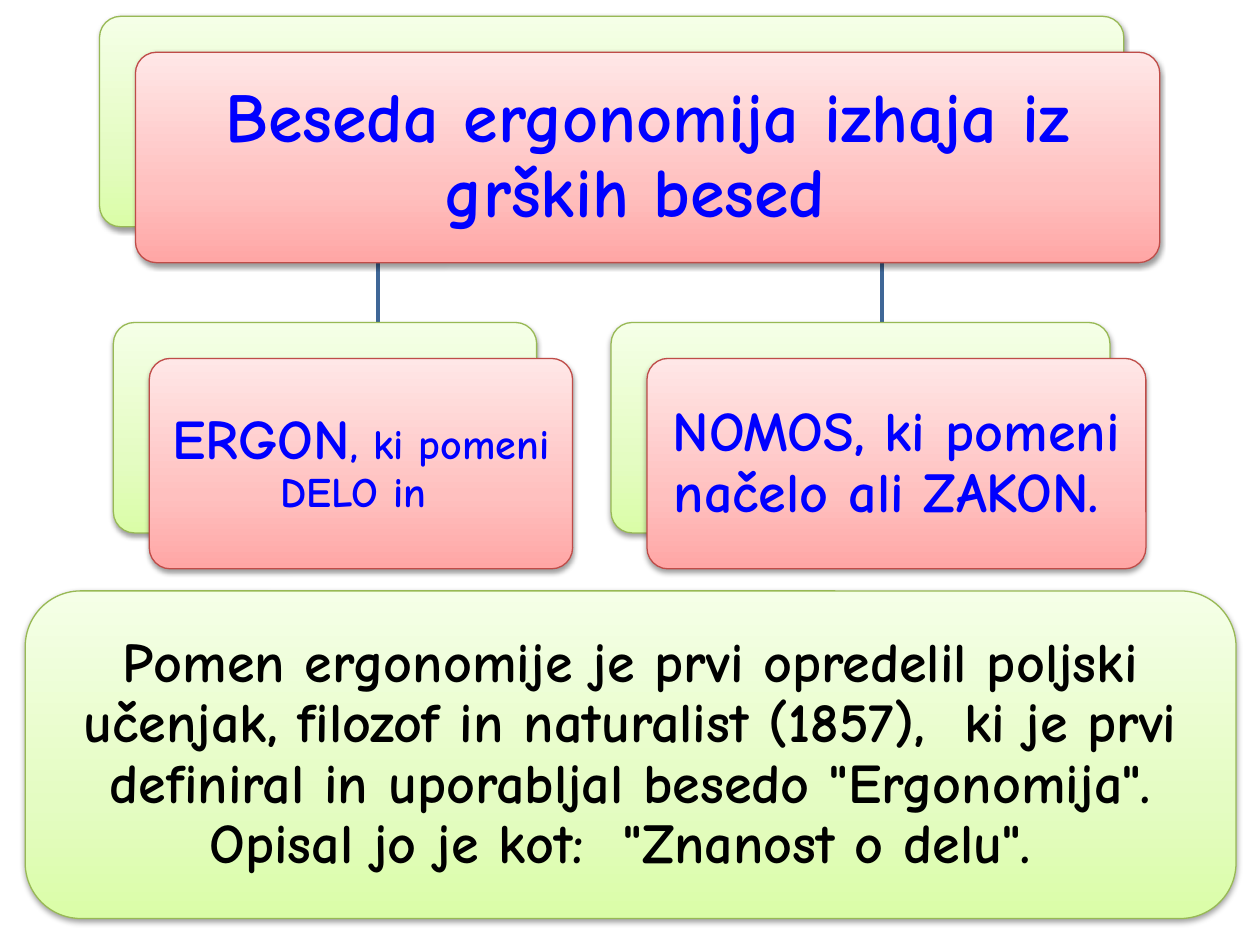
"""Build a slide on the Greek roots of the word ergonomics."""
from copy import deepcopy
from lxml import etree
from pptx import Presentation
from pptx.dml.color import RGBColor
from pptx.enum.shapes import MSO_SHAPE
from pptx.enum.text import MSO_ANCHOR, PP_ALIGN
from pptx.oxml import parse_xml
from pptx.util import Inches, Pt

ROUND = MSO_SHAPE.ROUNDED_RECTANGLE
MIDDLE, CENTER = MSO_ANCHOR.MIDDLE, PP_ALIGN.CENTER
NS = "http://schemas.openxmlformats.org/drawingml/2006/main"

THEME = {
    "font": "Comic Neue",
    "blue": "0000FF",
    "black": "000000",
    "link": "3F6797",
    "green": (("DAFDA7", "E4FCC2", "F5FFE7"), "98B955"),
    "red": (("FFA6A5", "FFC0BF", "FFE7E7"), "BF4C48"),
    "title": 40,
    "body": 32,
    "small": 24,
}

ROOT = {"left": 0.79, "width": 8.13, "inset": 0.17,
        "runs": [("Beseda ergonomija izhaja iz grških besed ", "title")]}
BRANCHES = [
    {"left": 0.9, "width": 3.36, "inset": 0.13,
     "runs": [("ERGON", "body"), (", ki pomeni DELO in ", "small")]},
    {"left": 4.85, "width": 3.96, "inset": 0.13,
     "runs": [("NOMOS, ki pomeni načelo ali ZAKON. ", "body")]},
]
MEANING = [("Pomen ergonomije je prvi opredelil poljski učenjak, filozof in "
            "naturalist (1857),  ki je prvi definiral in uporabljal besedo "
            "\"Ergonomija\". Opisal jo je kot:  \"Znanost o delu\". ", "body")]

CARD_H, OFFSET = 1.67, 0.285
ROOT_TOP, BRANCH_TOP, ELBOW = 0.13, 2.56, 2.32


def rgb(value):
    return RGBColor.from_string(value)


def add_box(shapes, x, y, w, h, look, corner):
    stops, outline = THEME[look]
    sp = shapes.add_shape(ROUND, Inches(x), Inches(y), Inches(w), Inches(h))
    sp.adjustments[0] = corner
    sp.fill.gradient()
    sp.fill.gradient_angle = 90
    last = sp._element.spPr.find(f".//{{{NS}}}gs[last()]")
    last.addprevious(deepcopy(last))
    for stop, color, position in zip(sp.fill.gradient_stops, stops, (0, 0.35, 1)):
        stop.color.rgb = rgb(color)
        stop.position = position
    sp.line.color.rgb = rgb(outline)
    sp.line.width = Pt(0.75)
    sp.shadow.inherit = False
    effects = sp._element.spPr.find(f"{{{NS}}}effectLst")
    effects.append(parse_xml(
        f'<a:outerShdw xmlns:a="{NS}" blurRad="{Pt(3.1)}" dist="{Pt(1.6)}" '
        'dir="5400000" rotWithShape="0"><a:srgbClr val="000000">'
        '<a:alpha val="38000"/></a:srgbClr></a:outerShdw>'))
    return sp


def set_text(sp, runs, color, inset):
    tf = sp.text_frame
    tf.word_wrap = True
    tf.vertical_anchor = MIDDLE
    tf.margin_left = tf.margin_right = Inches(inset)
    tf.margin_top = tf.margin_bottom = Inches(inset)
    p = tf.paragraphs[0]
    p.alignment = CENTER
    p.line_spacing = 0.9
    p.font.name = THEME["font"]
    p.font.bold = True
    p.font.color.rgb = rgb(THEME[color])
    spacing = etree.SubElement(p._p.get_or_add_pPr(), f"{{{NS}}}spcAft")
    etree.SubElement(spacing, f"{{{NS}}}spcPct", val="35000")
    p._p.pPr.find(f"{{{NS}}}lnSpc").addnext(spacing)
    for text, size in runs:
        r = p.add_run()
        r.text = text
        r.font.size = Pt(THEME[size])


def add_card(shapes, card, top):
    x, w = card["left"], card["width"]
    add_box(shapes, x, top, w, CARD_H, "green", 0.1)
    sp = add_box(shapes, x + OFFSET, top + OFFSET, w, CARD_H, "red", 0.1)
    set_text(sp, card["runs"], "blue", card["inset"])


def middle(card):
    return card["left"] + card["width"] / 2


def add_link(shapes, parent, child):
    x0, x1 = middle(parent), middle(child)
    path = [(x0, ELBOW), (x1, ELBOW), (x1, BRANCH_TOP)]
    fb = shapes.build_freeform(x0, ROOT_TOP + CARD_H, scale=Inches(1))
    fb.add_line_segments(path, close=False)
    sp = fb.convert_to_shape()
    sp.fill.background()
    sp.line.color.rgb = rgb(THEME["link"])
    sp.line.width = Pt(2)
    sp.shadow.inherit = False


def main():
    prs = Presentation()
    prs.slide_width, prs.slide_height = Inches(10), Inches(7.5)
    shapes = prs.slides.add_slide(prs.slide_layouts[6]).shapes
    for branch in reversed(BRANCHES):
        add_link(shapes, ROOT, branch)
    add_card(shapes, ROOT, ROOT_TOP)
    for branch in BRANCHES:
        add_card(shapes, branch, BRANCH_TOP)
    sp = add_box(shapes, 0.2, 4.69, 9.61, 2.6, "green", 0.17)
    set_text(sp, MEANING, "black", 0.13)
    prs.save("out.pptx")


if __name__ == "__main__":
    main()
